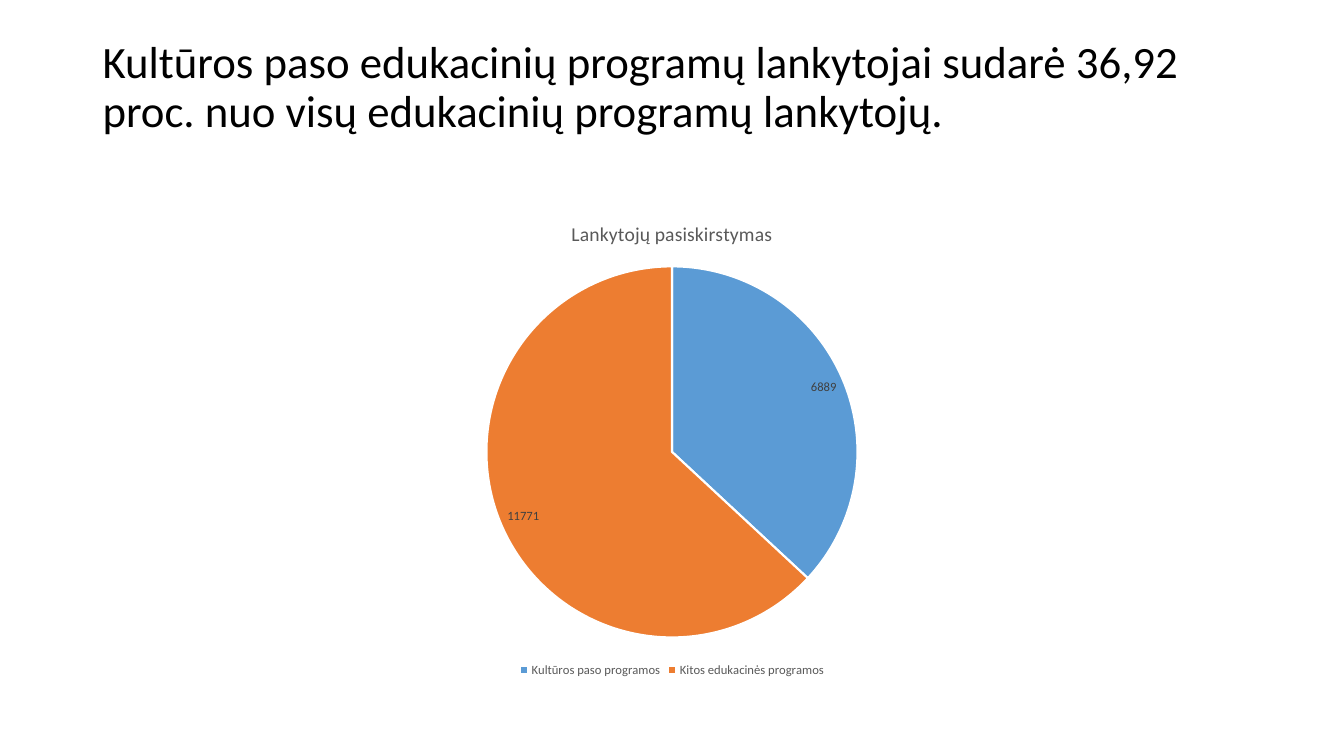
import pptx
import pptx.chart.data
import pptx.dml.color
import pptx.enum.chart
import pptx.enum.text
import pptx.util

Cm = pptx.util.Cm
Pt = pptx.util.Pt
RGB = pptx.dml.color.RGBColor

BLACK = RGB(0x00, 0x00, 0x00)
WHITE = RGB(0xFF, 0xFF, 0xFF)
GREY = RGB(0x59, 0x59, 0x59)
DARK = RGB(0x40, 0x40, 0x40)
BLUE = RGB(0x5B, 0x9B, 0xD5)
ORANGE = RGB(0xED, 0x7D, 0x31)
FACE = "Calibri"

HEAD = (
    "Kultūros paso edukacinių programų lankytojai sudarė 36,92 proc. "
    "nuo visų edukacinių programų lankytojų."
)
NAME = "Lankytojų pasiskirstymas"
PARTS = [
    ("Kultūros paso programos", 6889, BLUE),
    ("Kitos edukacinės programos", 11771, ORANGE),
]


def style(font, size, color):
    font.name = FACE
    font.size = Pt(size)
    font.bold = False
    font.color.rgb = color


def add_title(slide, left, top, width, height):
    title = slide.shapes.title
    title.left, title.top, title.width, title.height = left, top, width, height
    frame = title.text_frame
    frame.text = HEAD
    frame.word_wrap = True
    frame.auto_size = pptx.enum.text.MSO_AUTO_SIZE.NONE
    frame.vertical_anchor = pptx.enum.text.MSO_ANCHOR.TOP
    frame.margin_top = 0
    line = frame.paragraphs[0]
    line.alignment = pptx.enum.text.PP_ALIGN.LEFT
    line.line_spacing = 0.9
    style(line.font, 32, BLACK)


def add_pie(slide, left, top, width, height):
    data = pptx.chart.data.CategoryChartData()
    data.categories = [label for label, count, color in PARTS]
    data.add_series(NAME, [count for label, count, color in PARTS])
    kind = pptx.enum.chart.XL_CHART_TYPE.PIE
    chart = slide.shapes.add_chart(kind, left, top, width, height, data).chart
    style(chart.font, 10, BLACK)

    chart.has_title = True
    head = chart.chart_title.text_frame
    head.text = NAME
    style(head.paragraphs[0].font, 14, GREY)

    chart.has_legend = True
    chart.legend.position = pptx.enum.chart.XL_LEGEND_POSITION.BOTTOM
    chart.legend.include_in_layout = False
    style(chart.legend.font, 9, GREY)

    plot = chart.plots[0]
    plot.vary_by_categories = True
    plot.has_data_labels = True
    labels = plot.data_labels
    labels.show_value = True
    labels.show_percentage = False
    labels.position = pptx.enum.chart.XL_LABEL_POSITION.INSIDE_END
    style(labels.font, 9, DARK)

    for index, (label, count, color) in enumerate(PARTS):
        form = plot.series[0].points[index].format
        form.fill.solid()
        form.fill.fore_color.rgb = color
        form.line.color.rgb = WHITE
        form.line.width = Pt(1.5)


def main():
    deck = pptx.Presentation()
    deck.slide_width = Cm(33.87)
    deck.slide_height = Cm(19.05)
    slide = deck.slides.add_slide(deck.slide_layouts[5])
    left, width = Cm(2.33), Cm(29.21)
    add_title(slide, left, Cm(1.01), width, Cm(3.68))
    add_pie(slide, left, Cm(5.08), width, Cm(12.09))
    deck.save("out.pptx")


if __name__ == "__main__":
    main()
